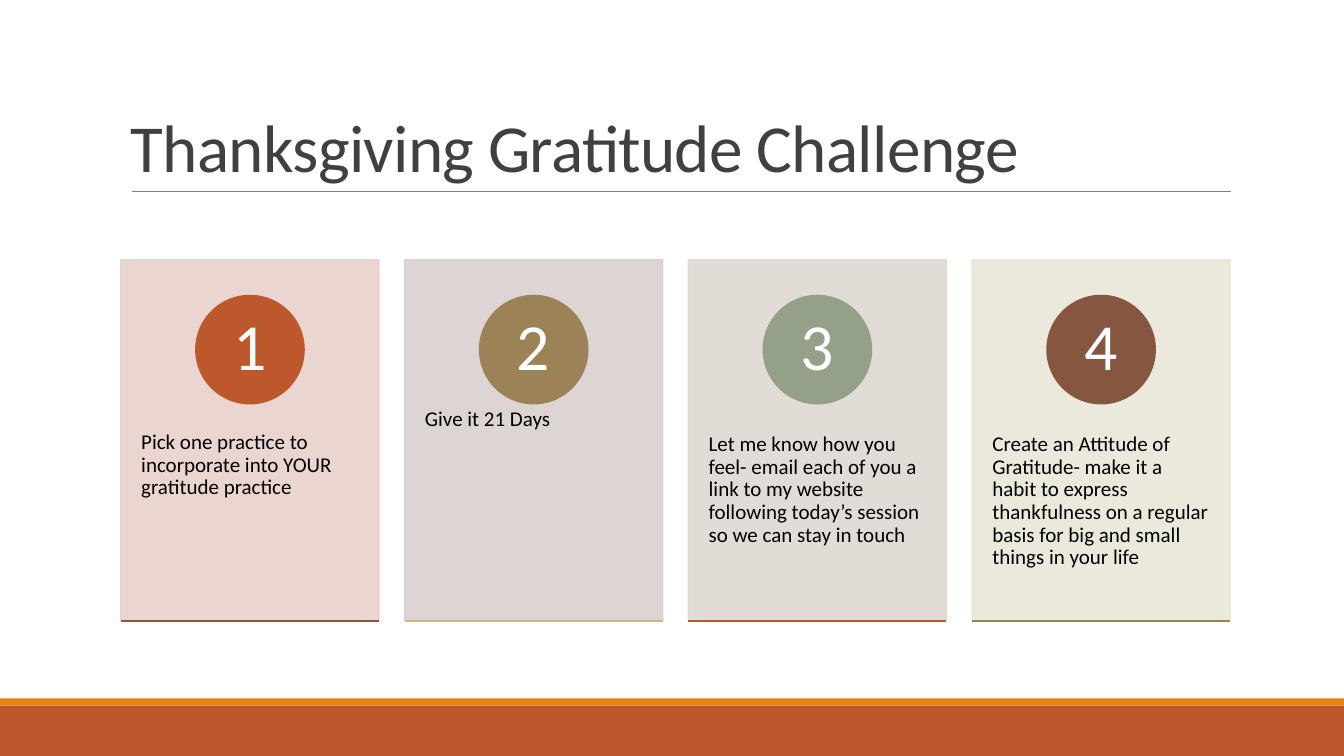
"""Build the Thanksgiving Gratitude Challenge slide with four numbered cards."""
from lxml import etree
from pptx import Presentation
from pptx.dml.color import RGBColor
from pptx.enum import shapes, text
from pptx.oxml.ns import qn
from pptx.util import Cm, Pt


def paint(sp, color, border=None, alpha=None):
    sp.shadow.inherit = False
    sp.fill.solid()
    sp.fill.fore_color.rgb = RGBColor.from_string(color)
    if border:
        sp.line.color.rgb = RGBColor.from_string(color)
        sp.line.width = Pt(border)
    else:
        sp.line.fill.background()
    if alpha:
        for clr in sp._element.spPr.iter(qn("a:srgbClr")):
            etree.SubElement(clr, qn("a:alpha")).set("val", str(alpha * 1000))


def write(sp, words, size, color, spacing, anchor, insets):
    tf = sp.text_frame
    tf.word_wrap = True
    tf.vertical_anchor = anchor
    tf.margin_left = tf.margin_right = Cm(insets[0])
    tf.margin_top = tf.margin_bottom = Cm(insets[1])
    p = tf.paragraphs[0]
    p.text = words
    p.line_spacing = spacing
    p.font.name = "Calibri"
    p.font.size = Pt(size)
    p.font.color.rgb = RGBColor.from_string(color)
    return p


prs = Presentation()
prs.slide_width, prs.slide_height = Cm(33.87), Cm(19.05)
s = prs.slides.add_slide(prs.slide_layouts[6])
RECT, OVAL = shapes.MSO_SHAPE.RECTANGLE, shapes.MSO_SHAPE.OVAL
TOP, MIDDLE, BOTTOM = text.MSO_ANCHOR.TOP, text.MSO_ANCHOR.MIDDLE, text.MSO_ANCHOR.BOTTOM

for top, height, color in [(17.78, 1.27, "BD582C"), (17.6, 0.18, "E48312")]:
    paint(s.shapes.add_shape(RECT, 0, Cm(top), prs.slide_width, Cm(height)), color)

title = s.shapes.add_textbox(Cm(3.05), Cm(0.79), Cm(27.94), Cm(4.04))
p = write(title, "Thanksgiving Gratitude Challenge", 48, "404040", 0.85, BOTTOM, (0.25, 0.13))
p.runs[0]._r.get_or_add_rPr().set("spc", "-50")

left, pitch, width = 3.05, 7.15, 6.5
card_top, card_height = 6.55, 9.09
circle = 2.72
rules = [(3.33, 31.01, 4.83, "808080", 0.5)]

cards = [
    ("E8D1CD", "BD582C", "865640", "Pick one practice to incorporate into YOUR gratitude practice"),
    ("D9D1CF", "9B8357", "C2BC80", "Give it 21 Days"),
    ("DED9D1", "94A088", "BD582C", "Let me know how you feel- email each of you a link to my website "
     "following today’s session so we can stay in touch"),
    ("E9E7D8", "865640", "9B8357", "Create an Attitude of Gratitude- make it a habit to express "
     "thankfulness on a regular basis for big and small things in your life"),
]
for i, (back, badge, edge, words) in enumerate(cards):
    x = left + i * pitch
    card = s.shapes.add_shape(RECT, Cm(x), Cm(card_top), Cm(width), Cm(card_height))
    paint(card, back, 1.25, 90)

    body = s.shapes.add_textbox(Cm(x), Cm(10.01), Cm(width), Cm(5.46))
    write(body, words, 15, "000000", 0.9, TOP, (0.51, 0.91))

    sp = s.shapes.add_shape(OVAL, Cm(x + (width - circle) / 2), Cm(7.45), Cm(circle), Cm(circle))
    paint(sp, badge, 1.25)
    p = write(sp, str(i + 1), 47, "FFFFFF", 0.9, MIDDLE, (0.2, 0.03))
    p.alignment = text.PP_ALIGN.CENTER

    rules.append((x, x + width, card_top + card_height, edge, 1.25))

for x1, x2, y, color, weight in rules:
    line = s.shapes.add_connector(shapes.MSO_CONNECTOR.STRAIGHT, Cm(x1), Cm(y), Cm(x2), Cm(y))
    line.line.color.rgb = RGBColor.from_string(color)
    line.line.width = Pt(weight)
    etree.SubElement(line._element.spPr, qn("a:effectLst"))

prs.save("out.pptx")
